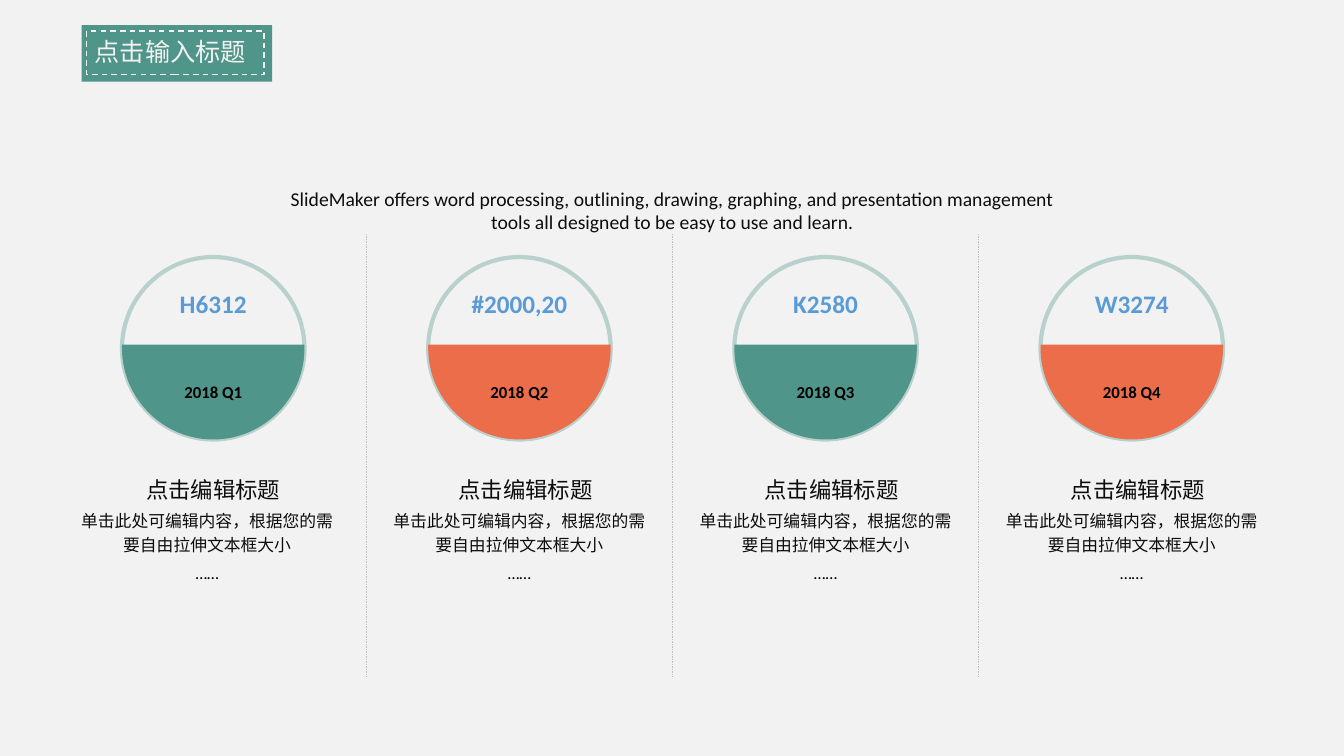
"""Build a slide with four quarterly circles, captions and a title banner."""
from lxml import etree
from pptx import Presentation, util as u
from pptx.dml import color
from pptx.enum import dml, shapes, text
from pptx.oxml import ns

COLORS = {
    "background": "F2F2F2", "green": "4F958A", "orange": "EB6D4A",
    "blue": "5B9BD5", "grey": "BFBFBF", "ink": "0D0D0D", "black": "000000",
}
LATIN, CHINESE = "Calibri", "Noto Sans CJK SC"
QUARTERS = [
    ("H6312", "2018 Q1", "green", -0.06),
    ("#2000,20", "2018 Q2", "orange", 0),
    ("K2580", "2018 Q3", "green", 0),
    ("W3274", "2018 Q4", "orange", 0),
]
FIRST_LEFT, FIRST_DIVIDER, PITCH = 1.21, 3.63, 9.11 / 3
CIRCLE_TOP, DIAMETER, FILL_TOP = 2.55, 1.81, 3.42
ARC_HANDLE = 0.55
INTRO = ("SlideMaker offers word processing, outlining, drawing, graphing, and "
         "presentation management tools all designed to be easy to use and learn.")
HEADING = "点击编辑标题"
BODY = "单击此处可编辑内容，根据您的需要自由拉伸文本框大小"


def rgb(name):
    """Return the named palette colour."""
    return color.RGBColor.from_string(COLORS[name])


def apply(target, values):
    """Set each attribute of the target from a dict."""
    for name, value in values.items():
        setattr(target, name, value)


def style_shape(shape, fill=None, line=None, width=1, dash=None):
    """Give a shape its fill and outline without a shadow."""
    shape.shadow.inherit = False
    if fill:
        shape.fill.solid()
        shape.fill.fore_color.rgb = rgb(fill)
    else:
        shape.fill.background()
    if line:
        shape.line.color.rgb = rgb(line)
        apply(shape.line, {"width": u.Pt(width), "dash_style": dash})
    else:
        shape.line.fill.background()


def write(paragraph, words, size, ink, align=text.PP_ALIGN.CENTER, latin=LATIN,
          bold=False, spaced=False):
    """Write one formatted run into a paragraph."""
    paragraph.alignment = align
    if spaced:
        apply(paragraph, {"line_spacing": 1.2, "space_before": u.Pt(size * 0.2)})
    run = paragraph.add_run()
    run.text = words
    apply(run.font, {"size": u.Pt(size), "name": latin, "bold": bold})
    run.font.color.rgb = rgb(ink)
    etree.SubElement(run._r.get_or_add_rPr(), ns.qn("a:ea"), typeface=CHINESE)


def add_text(slide, box, lines, spaced=False):
    """Add a text box without margins, one paragraph per (words, size, ink)."""
    frame = slide.shapes.add_textbox(*map(u.Inches, box)).text_frame
    apply(frame, {"word_wrap": True, "auto_size": text.MSO_AUTO_SIZE.SHAPE_TO_FIT_TEXT,
                  "margin_left": 0, "margin_top": 0, "margin_right": 0,
                  "margin_bottom": 0})
    for index, line in enumerate(lines):
        paragraph = frame.add_paragraph() if index else frame.paragraphs[0]
        write(paragraph, *line, spaced=spaced)


def add_ring(slide, left, code):
    """Add a translucent ring with its code near the top."""
    ring = slide.shapes.add_shape(
        shapes.MSO_SHAPE.OVAL,
        *map(u.Inches, (left, CIRCLE_TOP, DIAMETER, DIAMETER)))
    style_shape(ring, line="green", width=3)
    line_color = ring.element.xpath("./p:spPr/a:ln//a:srgbClr")[0]
    etree.SubElement(line_color, ns.qn("a:alpha"), val="35000")
    ring.text_frame.vertical_anchor = text.MSO_ANCHOR.TOP
    write(ring.text_frame.paragraphs[0], code, 18, "blue", bold=True)


def curve_segment(segment, controls):
    """Turn a straight freeform segment into a curve with two control points."""
    segment.tag = ns.qn("a:cubicBezTo")
    for index, (x, y) in enumerate(controls):
        point = etree.Element(ns.qn("a:pt"), x=str(u.Inches(x)), y=str(u.Inches(y)))
        segment.insert(index, point)


def add_bowl(slide, left, quarter, fill):
    """Add the filled lower part of a circle with its quarter label."""
    radius = DIAMETER / 2
    middle = CIRCLE_TOP + radius - FILL_TOP
    depth = CIRCLE_TOP + DIAMETER - FILL_TOP
    handle = radius * ARC_HANDLE
    corners = [(DIAMETER, 0), (DIAMETER, middle), (radius, depth), (0, middle)]
    builder = slide.shapes.build_freeform(u.Inches(left), u.Inches(FILL_TOP))
    builder.add_line_segments(
        [(u.Inches(left + x), u.Inches(FILL_TOP + y)) for x, y in corners], close=True)
    bowl = builder.convert_to_shape()
    segments = bowl.element.xpath(".//a:lnTo")
    curve_segment(segments[2], [(DIAMETER, middle + handle), (radius + handle, depth)])
    curve_segment(segments[3], [(radius - handle, depth), (0, middle + handle)])
    style_shape(bowl, fill=fill)
    bowl.text_frame.vertical_anchor = text.MSO_ANCHOR.MIDDLE
    write(bowl.text_frame.paragraphs[0], quarter, 12, "black", bold=True)


def add_divider(slide, x):
    """Add a thin dashed vertical line."""
    divider = slide.shapes.add_connector(
        shapes.MSO_CONNECTOR.STRAIGHT, *map(u.Inches, (x, 2.32, x, 6.72)))
    divider.line.color.rgb = rgb("grey")
    apply(divider.line, {"width": u.Pt(0.25), "dash_style": dml.MSO_LINE.DASH})
    etree.SubElement(divider.element.spPr, ns.qn("a:effectLst"))


def add_banner(slide, words):
    """Add the title banner and put the title placeholder on it."""
    for box, style in (
        ((0.81, 0.25, 1.89, 0.56), {"fill": "green"}),
        ((0.86, 0.31, 1.76, 0.43), {"line": "background", "dash": dml.MSO_LINE.DASH}),
    ):
        panel = slide.shapes.add_shape(shapes.MSO_SHAPE.RECTANGLE, *map(u.Inches, box))
        style_shape(panel, **style)
    title = slide.shapes.title
    apply(title, {"left": u.Inches(0.84), "top": u.Inches(0.31),
                  "width": u.Inches(1.94), "height": u.Inches(0.4)})
    apply(title.text_frame, {"word_wrap": True,
                             "vertical_anchor": text.MSO_ANCHOR.TOP,
                             "auto_size": text.MSO_AUTO_SIZE.SHAPE_TO_FIT_TEXT})
    write(title.text_frame.paragraphs[0], words, 18, "background",
          text.PP_ALIGN.LEFT, CHINESE)
    title.element.getparent().append(title.element)


def main():
    """Build and save the presentation."""
    presentation = Presentation()
    apply(presentation, {"slide_width": u.Inches(13.33), "slide_height": u.Inches(7.5)})
    slide = presentation.slides.add_slide(presentation.slide_layouts[5])
    slide.background.fill.solid()
    slide.background.fill.fore_color.rgb = rgb("background")
    for index, (code, quarter, fill, _) in enumerate(QUARTERS):
        left = FIRST_LEFT + index * PITCH
        add_ring(slide, left, code)
        add_bowl(slide, left, quarter, fill)
    for index in range(len(QUARTERS) - 1):
        add_divider(slide, FIRST_DIVIDER + index * PITCH)
    add_banner(slide, "点击输入标题")
    add_text(slide, (2.77, 1.85, 7.8, 0.47), [(INTRO, 14, "ink")])
    for index, (_, _, _, nudge) in enumerate(QUARTERS):
        left = FIRST_LEFT + index * PITCH + nudge
        add_text(slide, (left + 0.2, 4.67, 1.53, 0.32),
                 [(HEADING, 16, "ink")], spaced=True)
        add_text(slide, (left - 0.37, 5.03, 2.55, 0.77),
                 [(BODY, 12, "ink"), ("……", 12, "black")], spaced=True)
    presentation.save("out.pptx")


if __name__ == "__main__":
    main()
